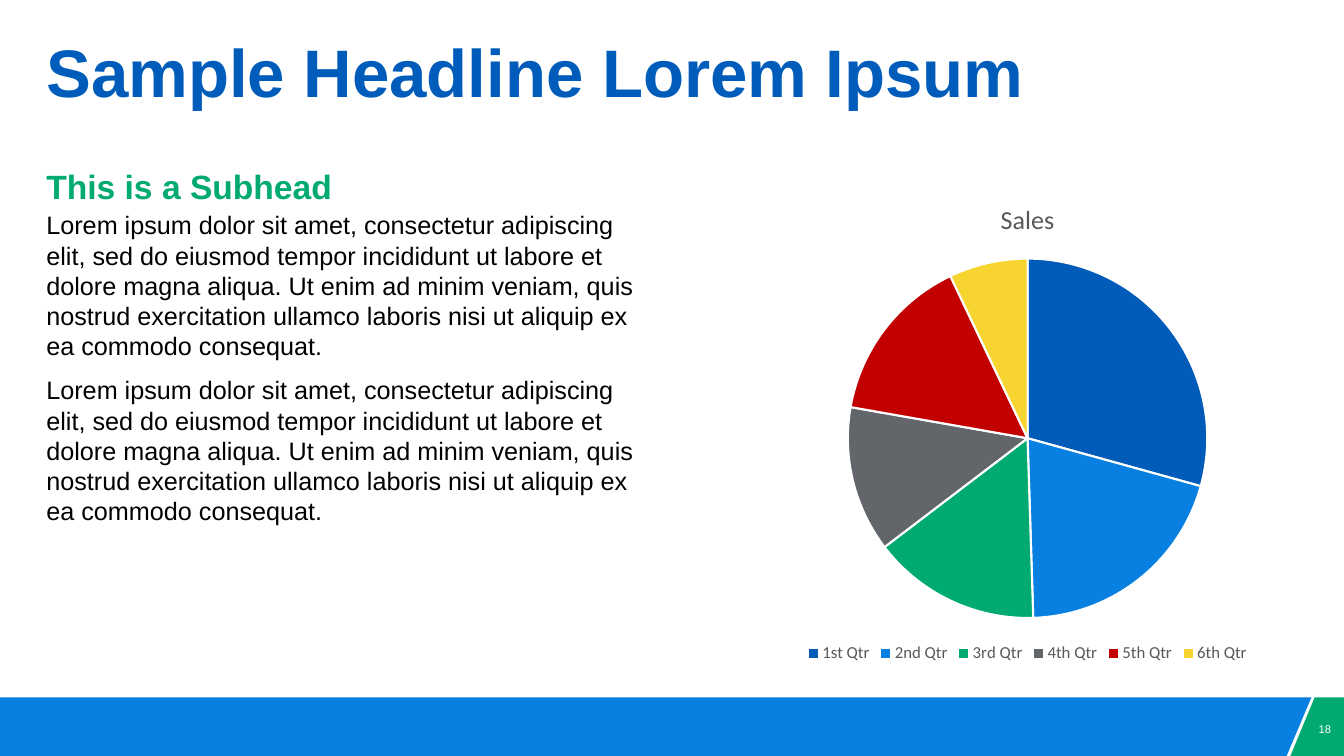
from lxml import etree
from pptx import Presentation
from pptx.chart.data import CategoryChartData
from pptx.dml.color import RGBColor
from pptx.enum import chart as charts, text
from pptx.oxml.ns import qn
from pptx.util import Pt

BLUE, SKY, GREEN, WHITE, GREY = "005CBA", "0780E2", "00AA71", "FFFFFF", "595959"
LOREM = (
    "Lorem ipsum dolor sit amet, consectetur adipiscing elit, sed do eiusmod "
    "tempor incididunt ut labore et dolore magna aliqua. Ut enim ad minim veniam, "
    "quis nostrud exercitation ullamco laboris nisi ut aliquip ex ea commodo consequat."
)
SALES = [
    ("1st Qtr", 29, "005BB9"),
    ("2nd Qtr", 20, SKY),
    ("3rd Qtr", 15, GREEN),
    ("4th Qtr", 13, "626569"),
    ("5th Qtr", 15, "C30000"),
    ("6th Qtr", 7, "F7D42F"),
]


def rgb(code):
    return RGBColor.from_string(code)


def style(font, name, size, color, bold=False):
    font.name, font.size, font.bold = name, Pt(size), bold
    font.color.rgb = rgb(color)


def write(shape, box, words, size, color, bold=False, line=0.9,
          align=text.PP_ALIGN.LEFT, anchor=text.MSO_ANCHOR.TOP):
    shape.left, shape.top, shape.width, shape.height = map(Pt, box)
    frame = shape.text_frame
    frame.text = words
    frame.word_wrap = True
    frame.auto_size = text.MSO_AUTO_SIZE.NONE
    frame.vertical_anchor = anchor
    frame.margin_left = frame.margin_right = frame.margin_top = frame.margin_bottom = 0
    for spot, para in enumerate(frame.paragraphs):
        para.alignment = align
        para.line_spacing = line
        para.space_before = Pt(10 if spot else 0)
        props = para._p.get_or_add_pPr()
        props.set("marL", "0")
        props.set("indent", "0")
        etree.SubElement(props, qn("a:buNone"))
        for run in para.runs:
            style(run.font, "Arial", size, color, bold)


def prose(slide, box):
    left, top, width, height = box
    head, body = slide.placeholders[1], slide.placeholders[2]
    write(head, (left, top, width, 26), "This is a Subhead", 24, GREEN, True)
    write(body, (left, top + 28, width, height - 28), f"{LOREM}\n{LOREM}", 18,
          "000000", line=Pt(21.6))


def pie(slide, box):
    data = CategoryChartData()
    data.categories = [name for name, _, _ in SALES]
    data.add_series("Sales", [value for _, value, _ in SALES])
    chart = slide.shapes.add_chart(charts.XL_CHART_TYPE.PIE, *map(Pt, box), data).chart
    style(chart.font, "Calibri", 10, "000000")
    chart.has_title = True
    title = chart.chart_title.text_frame
    title.text = "Sales"
    style(title.paragraphs[0].runs[0].font, "Calibri", 18.6, GREY)
    chart.has_legend = True
    chart.legend.position = charts.XL_LEGEND_POSITION.BOTTOM
    chart.legend.include_in_layout = False
    style(chart.legend.font, "Calibri", 12, GREY)
    plot = chart.plots[0]
    plot.vary_by_categories = True
    for spot, (_, _, color) in enumerate(SALES):
        form = plot.series[0].points[spot].format
        form.fill.solid()
        form.fill.fore_color.rgb = rgb(color)
        form.line.color.rgb = rgb(WHITE)
        form.line.width = Pt(1.5)


def panel(slide, points, color):
    start, *rest = [(Pt(x), Pt(y)) for x, y in points]
    pen = slide.shapes.build_freeform(*start)
    pen.add_line_segments(rest, close=True)
    shape = pen.convert_to_shape()
    shape.shadow.inherit = False
    shape.fill.solid()
    shape.fill.fore_color.rgb = rgb(color)
    shape.line.fill.background()


def footer(slide, box):
    left, top, width, height = box
    right, low = left + width, top + height
    panel(slide, [(left, top), (right - 23.3, top), (right - 41, low), (left, low)], SKY)
    panel(slide, [(right - 21, top), (right, top), (right, low), (right - 38.3, low)], GREEN)
    spot = (right - 26.2, top + 8, 25.2, 28.8)
    label = slide.shapes.add_textbox(*map(Pt, spot))
    write(label, spot, "18", 8, WHITE, line=1.0, align=text.PP_ALIGN.CENTER,
          anchor=text.MSO_ANCHOR.MIDDLE)


def main():
    deck = Presentation()
    deck.slide_width, deck.slide_height = Pt(960), Pt(540)
    slide = deck.slides.add_slide(deck.slide_layouts[3])
    write(slide.shapes.title, (33.1, 28.1, 893.5, 52.6),
          "Sample Headline Lorem Ipsum", 48, BLUE, True)
    prose(slide, (33.1, 121.7, 427, 260))
    pie(slide, (541.4, 129.6, 385.2, 347))
    footer(slide, (0, 498.2, 960, 41.8))
    deck.save("out.pptx")


if __name__ == "__main__":
    main()
